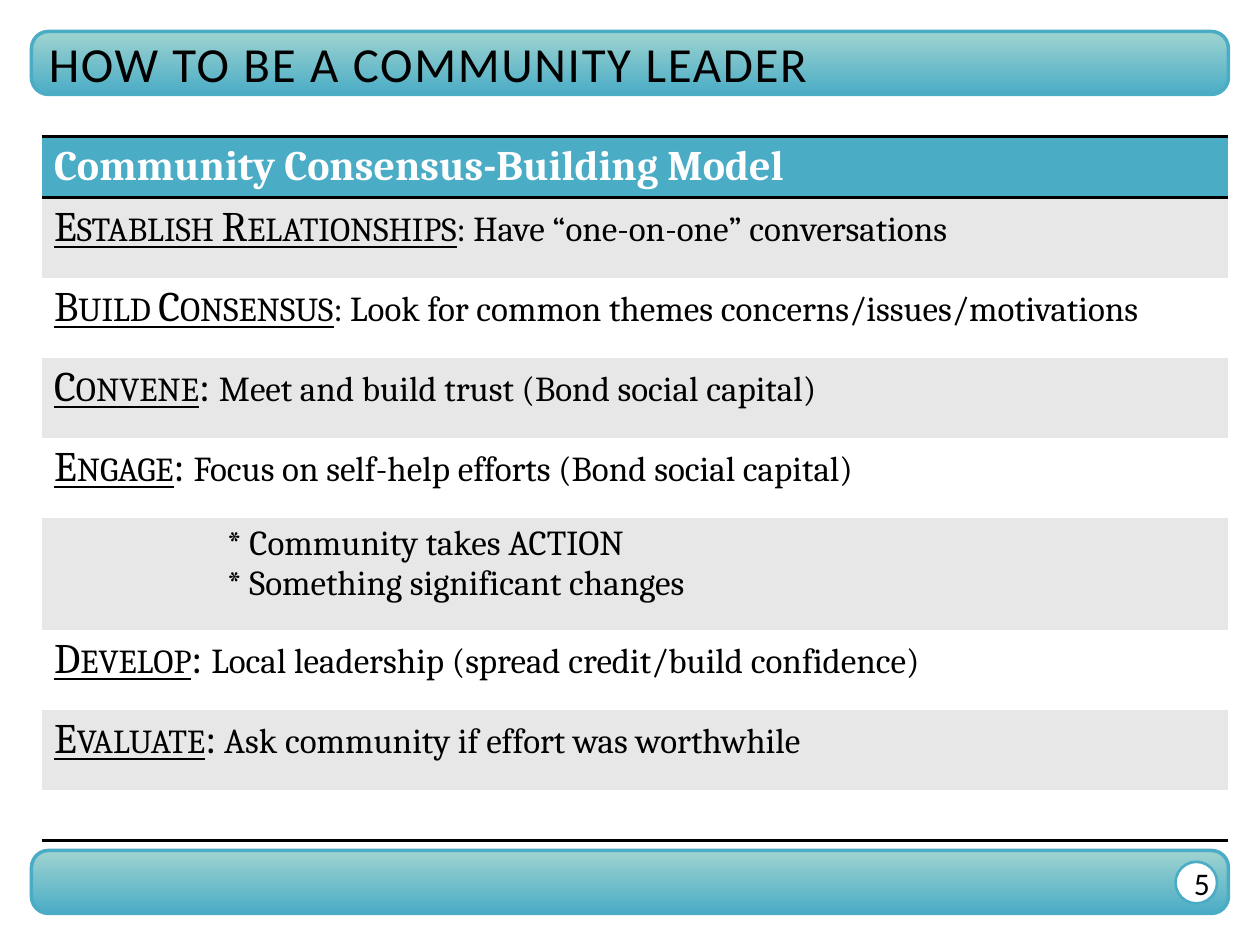
from lxml.etree import SubElement
from pptx import Presentation
from pptx.dml.color import RGBColor
from pptx.enum.shapes import MSO_SHAPE
from pptx.enum.text import MSO_ANCHOR, PP_ALIGN
from pptx.oxml.ns import qn
from pptx.util import Inches, Pt

# Content: heading, punctuation at heading size, description
TITLE = "HOW TO BE A COMMUNITY LEADER"
PAGE_NUMBER = "5"
TABLE_HEADING = "Community Consensus-Building Model"
STEPS_BEFORE = [
    ("Establish Relationships", "", ": Have “one-on-one” conversations"),
    ("Build Consensus", "", ": Look for common themes concerns/issues/motivations"),
    ("Convene", ": ", "Meet and build trust (Bond social capital)"),
    ("Engage", ": ", "Focus on self-help efforts (Bond social capital)"),
]
ACTIONS = [("* Community takes ", "ACTION"), ("* Something significant changes", "")]
STEPS_AFTER = [
    ("Develop", ": ", "Local leadership (spread credit/build confidence)"),
    ("Evaluate", ":", " Ask community if effort was worthwhile"),
]

# Look and layout, in inches
TEAL, LIGHT_TEAL, GRAY, WHITE, BLACK = "4BACC6", "9FD4D0", "E7E7E7", "FFFFFF", "000000"
WIDTH, HEIGHT, MARGIN, BAR_HEIGHT = 10, 7.5, 0.25, 0.5
BAR_WIDTH = WIDTH - 2 * MARGIN
FOOTER_TOP = HEIGHT - MARGIN - BAR_HEIGHT
TABLE_LEFT, TABLE_TOP, TABLE_WIDTH = 0.33, 1.08, 9.42
HEADING_ROW, STEP_ROW, ACTION_ROW, LAST_ROW = 0.49, 0.635, 0.89, 0.4
ACTION_INDENT = 1.37
BADGE_SIZE = 0.33
PLAIN_TABLE = "{2D5ABB26-0587-4C30-8999-92F81FD0307C}"


def color(value):
    return RGBColor.from_string(value)


def add_text(paragraph, text, size=20, font="Cambria", fill=BLACK, bold=False,
             underline=False, small_caps=False, spacing=0, outline=0):
    run = paragraph.add_run()
    run.text = text
    run.font.size, run.font.name = Pt(size), font
    run.font.bold, run.font.underline = bold, underline
    run.font.color.rgb = color(fill)
    properties = run.font._element
    if small_caps:
        properties.set("cap", "small")
    if spacing:
        properties.set("spc", str(spacing * 100))
    if outline:
        line = properties.makeelement(qn("a:ln"), {"w": str(Pt(outline))})
        solid = SubElement(line, qn("a:solidFill"))
        SubElement(solid, qn("a:srgbClr"), val=BLACK)
        properties.insert(0, line)


def add_outlined_shape(slide, kind, left, top, width, height, line_width):
    shape = slide.shapes.add_shape(kind, *map(Inches, (left, top, width, height)))
    shape.shadow.inherit = False
    shape.line.color.rgb = color(TEAL)
    shape.line.width = Pt(line_width)
    shape.text_frame.vertical_anchor = MSO_ANCHOR.MIDDLE
    return shape


def add_bar(slide, top):
    bar = add_outlined_shape(slide, MSO_SHAPE.ROUNDED_RECTANGLE,
                             MARGIN, top, BAR_WIDTH, BAR_HEIGHT, 2)
    bar.adjustments[0] = 0.27
    bar.fill.gradient()
    bar.fill.gradient_angle = 90
    for stop, value, position in zip(bar.fill.gradient_stops, (TEAL, LIGHT_TEAL), (0, 1)):
        stop.color.rgb = color(value)
        stop.position = position
    return bar


def add_border(cell, side):
    line = SubElement(cell._tc.get_or_add_tcPr(), qn(f"a:{side}"), w=str(Pt(2)))
    solid = SubElement(line, qn("a:solidFill"))
    SubElement(solid, qn("a:srgbClr"), val=BLACK)


def fill_cell(cell, value):
    cell.fill.solid()
    cell.fill.fore_color.rgb = color(value)


def write_step(cell, step):
    heading, mark, description = step
    paragraph = cell.text_frame.paragraphs[0]
    add_text(paragraph, heading, size=24, underline=True, small_caps=True)
    if mark:
        add_text(paragraph, mark, size=24)
    add_text(paragraph, description)


def write_actions(cell):
    cell.margin_left = Inches(0.1 + ACTION_INDENT)
    for index, (text, emphasis) in enumerate(ACTIONS):
        frame = cell.text_frame
        paragraph = frame.add_paragraph() if index else frame.paragraphs[0]
        add_text(paragraph, text)
        if emphasis:
            add_text(paragraph, emphasis, outline=0.75)


def add_model_table(slide):
    body = STEPS_BEFORE + [None] + STEPS_AFTER
    heights = [HEADING_ROW] + [STEP_ROW if step else ACTION_ROW for step in body] + [LAST_ROW]
    frame = slide.shapes.add_table(len(heights), 1, Inches(TABLE_LEFT), Inches(TABLE_TOP),
                                   Inches(TABLE_WIDTH), Inches(sum(heights)))
    table = frame.table
    table._tbl.tblPr.find(qn("a:tableStyleId")).text = PLAIN_TABLE
    table.first_row = table.horz_banding = False
    for row, height in zip(table.rows, heights):
        row.height = Inches(height)
    cells = [row.cells[0] for row in table.rows]

    # Rules above and below the heading, and under the last row
    add_border(cells[0], "lnT")
    add_border(cells[0], "lnB")
    add_border(cells[-1], "lnB")

    # Heading, then alternating bands
    for index, cell in enumerate(cells):
        fill_cell(cell, TEAL if index == 0 else GRAY if index % 2 else WHITE)
    add_text(cells[0].text_frame.paragraphs[0], TABLE_HEADING, size=24, fill=WHITE, bold=True)
    for cell, step in zip(cells[1:], body):
        if step:
            write_step(cell, step)
        else:
            write_actions(cell)


def main():
    presentation = Presentation()
    presentation.slide_width, presentation.slide_height = Inches(WIDTH), Inches(HEIGHT)
    slide = presentation.slides.add_slide(presentation.slide_layouts[6])
    add_model_table(slide)

    # Footer and title bars
    add_bar(slide, FOOTER_TOP)
    title = add_bar(slide, MARGIN).text_frame.paragraphs[0]
    title.alignment = PP_ALIGN.LEFT
    add_text(title, TITLE, size=28, font="Calibri", spacing=1)

    # Page number badge
    badge = add_outlined_shape(slide, MSO_SHAPE.OVAL, 9.33, 6.84, BADGE_SIZE, BADGE_SIZE, 1.5)
    badge.fill.solid()
    badge.fill.fore_color.rgb = color(WHITE)
    frame = badge.text_frame
    frame.margin_left, frame.margin_right = Inches(0.09), 0
    frame.margin_top = frame.margin_bottom = 0
    frame.word_wrap = False
    frame.paragraphs[0].alignment = PP_ALIGN.CENTER
    add_text(frame.paragraphs[0], PAGE_NUMBER, size=18, font="Calibri")

    presentation.save("out.pptx")


if __name__ == "__main__":
    main()
